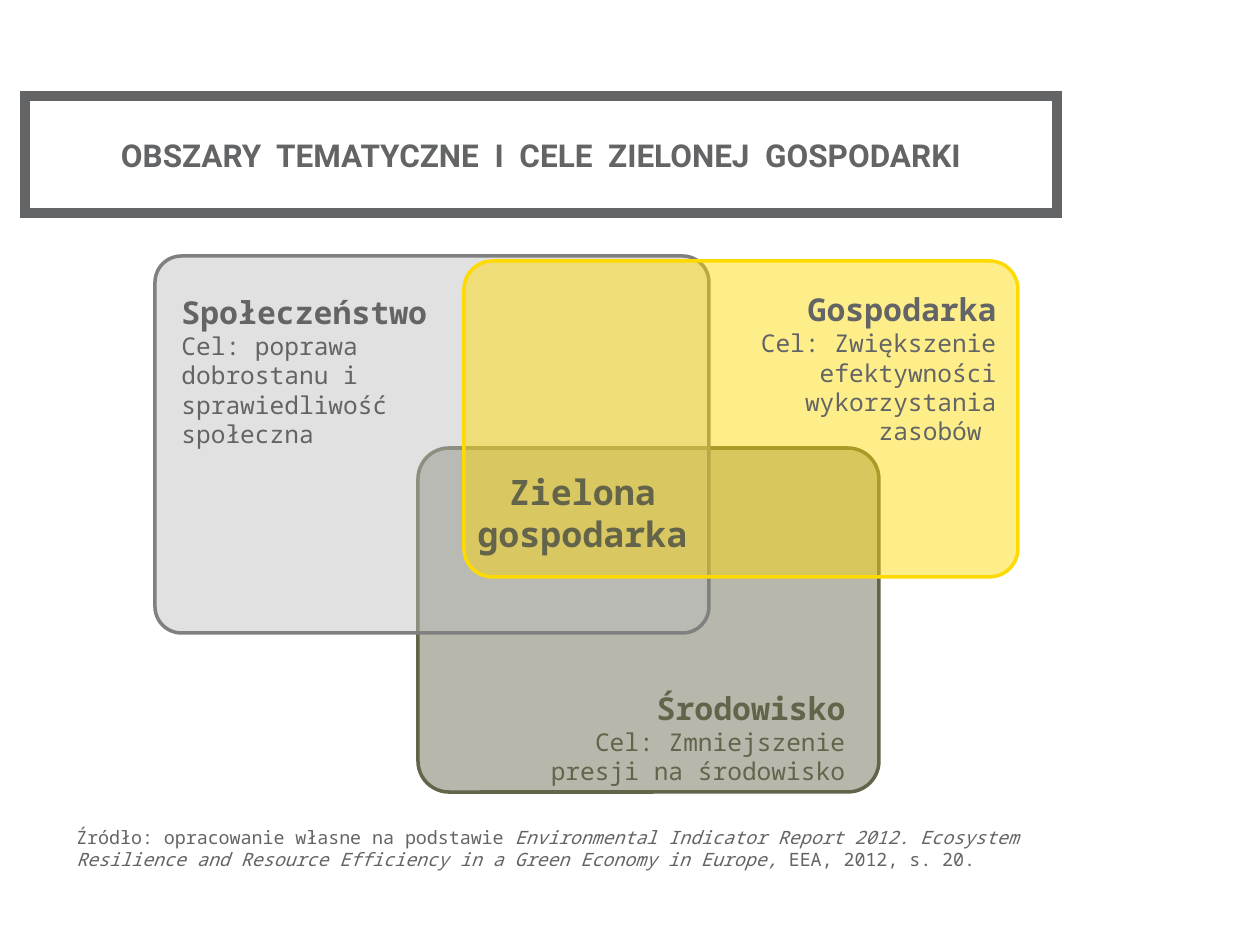
from pptx import Presentation
from pptx.dml.color import RGBColor
from pptx.enum.shapes import MSO_SHAPE
from pptx.enum.text import MSO_ANCHOR, MSO_AUTO_SIZE, PP_ALIGN
from pptx.oxml.ns import qn
from pptx.util import Emu, Pt
from lxml import etree

ROUNDED = MSO_SHAPE.ROUNDED_RECTANGLE
TOP, MIDDLE = MSO_ANCHOR.TOP, MSO_ANCHOR.MIDDLE
LEFT, CENTER, RIGHT = PP_ALIGN.LEFT, PP_ALIGN.CENTER, PP_ALIGN.RIGHT
NO_RESIZE = MSO_AUTO_SIZE.NONE
PX_PER_INCH = 126
MONO, ROBOTO = "Noto Sans Mono", "Roboto"
GREY, OLIVE, YELLOW = "636466", "64644B", "FEDA00"
OPACITY = 46


def px(*lengths):
    return [Emu(round(length * 914400 / PX_PER_INCH)) for length in lengths]


def color(hex_value):
    return RGBColor.from_string(hex_value)


def set_line(shape, hex_value, width):
    shape.line.color.rgb = color(hex_value)
    shape.line.width = Pt(width)


def add_span(para, text, size, hex_value, font=MONO, bold=False, italic=False):
    span = para.add_run()
    span.text = text
    span.font.name = font
    span.font.size = Pt(size)
    span.font.bold = bold
    span.font.italic = italic
    span.font.color.rgb = color(hex_value)


def add_title(slide, bounds, text):
    title = slide.shapes.title
    title.left, title.top, title.width, title.height = px(*bounds)
    set_line(title, GREY, 6)
    outline = title.line.fill._xPr
    etree.SubElement(outline, qn("a:miter"), lim="800000")
    frame = title.text_frame
    frame.auto_size = NO_RESIZE
    frame.word_wrap = True
    frame.vertical_anchor = MIDDLE
    para = frame.paragraphs[0]
    para.alignment = CENTER
    add_span(para, text, 18, GREY, font=ROBOTO, bold=True)


def add_area(slide, bounds, corner, fill, line):
    area = slide.shapes.add_shape(ROUNDED, *px(*bounds))
    area.shadow.inherit = False
    area.adjustments[0] = corner
    area.fill.solid()
    area.fill.fore_color.rgb = color(fill)
    tint = area.fill._xPr.find(qn("a:solidFill"))[0]
    etree.SubElement(tint, qn("a:alpha"), val=str(OPACITY * 1000))
    set_line(area, line, 2)


def add_box(slide, bounds, anchor):
    box = slide.shapes.add_textbox(*px(*bounds))
    frame = box.text_frame
    frame.word_wrap = True
    frame.vertical_anchor = anchor
    return frame


def add_goal(slide, bounds, name, goal, alignment, hex_value):
    frame = add_box(slide, bounds, MIDDLE)
    heading, detail = frame.paragraphs[0], frame.add_paragraph()
    heading.alignment = detail.alignment = alignment
    add_span(heading, name, 18, hex_value, bold=True)
    add_span(detail, goal, 14, hex_value)


def add_center_label(slide, bounds, text):
    para = add_box(slide, bounds, MIDDLE).paragraphs[0]
    para.alignment = CENTER
    add_span(para, text, 20, OLIVE, bold=True)


def add_citation(slide, bounds, spans):
    para = add_box(slide, bounds, TOP).paragraphs[0]
    para.alignment = LEFT
    for text, italic in spans:
        add_span(para, text, 10.5, GREY, italic=italic)


def main():
    deck = Presentation()
    deck.slide_width, deck.slide_height = px(1260, 945)
    slide = deck.slides.add_slide(deck.slide_layouts[5])

    add_title(slide, (25, 96, 1032, 117),
              "OBSZARY  TEMATYCZNE  I  CELE  ZIELONEJ  GOSPODARKI")
    add_citation(slide, (64, 820, 1022, 57), [
        ("Źródło: opracowanie własne na podstawie ", False),
        ("Environmental Indicator Report 2012. Ecosystem Resilience and "
         "Resource Efficiency in a Green Economy in Europe, ", True),
        ("EEA, 2012, s. 20.", False),
    ])

    add_area(slide, (418, 448, 461, 344), 0.09, OLIVE, OLIVE)
    add_area(slide, (155, 256, 554, 377), 0.07, "BFBFBF", "808080")
    add_goal(slide, (169, 286, 295, 170), "Społeczeństwo",
             "Cel: poprawa dobrostanu i sprawiedliwość społeczna", LEFT, GREY)
    add_area(slide, (464, 261, 554, 316), 0.09, YELLOW, YELLOW)
    add_goal(slide, (709, 283, 300, 170), "Gospodarka",
             "Cel: Zwiększenie efektywności wykorzystania zasobów ", RIGHT, GREY)
    add_goal(slide, (483, 682, 375, 111), "Środowisko",
             "Cel: Zmniejszenie presji na środowisko", RIGHT, OLIVE)
    add_center_label(slide, (464, 464, 237, 97), "Zielona gospodarka")

    deck.save("out.pptx")


if __name__ == "__main__":
    main()
